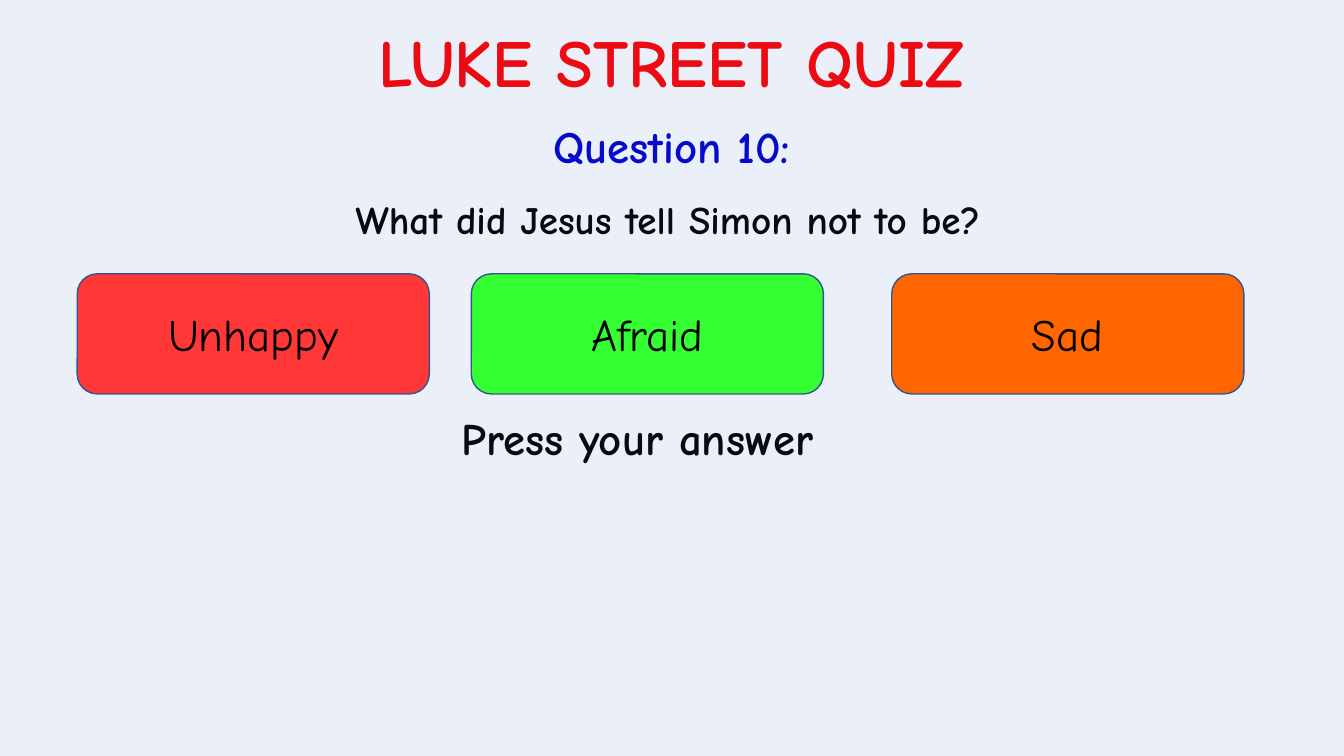
from lxml import etree
from pptx import Presentation
from pptx.dml.color import RGBColor
from pptx.enum.shapes import MSO_SHAPE as SHAPE
from pptx.enum.text import MSO_ANCHOR as ANCHOR, PP_ALIGN as ALIGN
from pptx.oxml.ns import qn
from pptx.util import Pt

FONT = "Comic Neue"
BORDER = "325491"
ANSWERS = [("Unhappy", "FF3737", 0), ("Afraid", "33FF33", 281.5), ("Sad", "FF6600", 581.8)]


def rgb(value):
    return RGBColor.from_string(value)


def write(tf, text, size, color="000000", bold=True, align=ALIGN.CENTER, spacing=None):
    p = tf.paragraphs[0]
    p.alignment = align
    p.line_spacing = spacing
    r = p.add_run()
    r.text = text
    for name, value in {"name": FONT, "size": Pt(size), "bold": bold}.items():
        setattr(r.font, name, value)
    r.font.color.rgb = rgb(color)


def add_label(s, box, text, size, wrap=True, **style):
    tf = s.shapes.add_textbox(*map(Pt, box)).text_frame
    tf.word_wrap = wrap
    write(tf, text, size, **style)


def add_panel(s, kind, box, fill):
    sp = s.shapes.add_shape(kind, *map(Pt, box))
    sp.shadow.inherit = False
    sp.fill.solid()
    sp.fill.fore_color.rgb = rgb(fill)
    sp.line.color.rgb = rgb(BORDER)
    sp.line.width = Pt(1)
    return sp


def add_tint(s, box):
    sp = add_panel(s, SHAPE.RECTANGLE, box, "4472C4")
    color = sp.fill._xPr.find(qn("a:solidFill"))[0]
    etree.SubElement(color, qn("a:alpha")).set("val", "10000")


def add_heading(s, left, top):
    add_label(s, (left, top, 509.8, 65.4), "LUKE STREET QUIZ", 48, wrap=False, color="FF0000")
    add_label(s, (left + 96.5, top + 70.5, 317.5, 46), "Question 10:", 32, color="0000CC")


def add_prompts(s, left, top):
    add_label(s, (left, top, 863.3, 85.7), "What did Jesus tell Simon not to be?", 28, spacing=Pt(36))
    add_label(s, (left + 277.2, top + 160.6, 484.6, 51.8), "Press your answer", 32,
              align=ALIGN.LEFT, spacing=0.9)


def add_answers(s, left, top, width, height):
    for text, fill, offset in ANSWERS:
        sp = add_panel(s, SHAPE.ROUNDED_RECTANGLE, (left + offset, top, width, height), fill)
        sp.text_frame.vertical_anchor = ANCHOR.MIDDLE
        write(sp.text_frame, text, 32, bold=False)


def main():
    prs = Presentation()
    prs.slide_width, prs.slide_height = Pt(960), Pt(540)
    s = prs.slides.add_slide(prs.slide_layouts[6])
    add_heading(s, 224.6, 10.8)
    add_prompts(s, 45.4, 133.9)
    add_tint(s, (-31, -58.3, 1021.7, 628.6))
    add_answers(s, 55.2, 195.6, 251.5, 85.8)
    prs.save("out.pptx")


if __name__ == "__main__":
    main()
